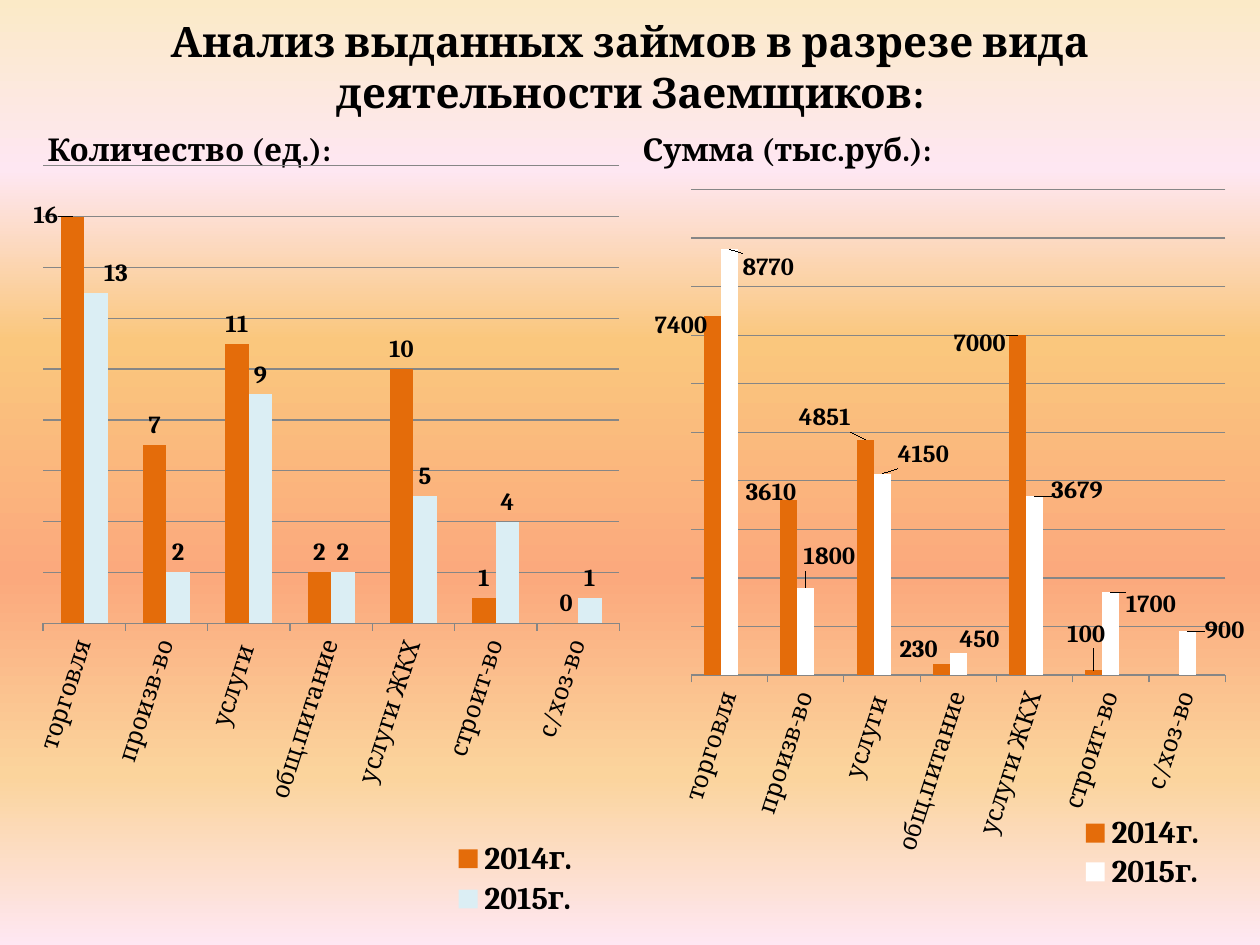
from collections import namedtuple
from lxml.etree import SubElement
from pptx import Presentation
from pptx.chart.data import CategoryChartData
from pptx.dml.color import RGBColor
from pptx.enum.chart import (XL_CHART_TYPE, XL_LABEL_POSITION, XL_LEGEND_POSITION,
                             XL_TICK_LABEL_POSITION, XL_TICK_MARK)
from pptx.enum.text import MSO_ANCHOR, PP_ALIGN
from pptx.oxml import parse_xml
from pptx.oxml.ns import nsdecls, qn
from pptx.util import Inches, Pt

Box = namedtuple("Box", "left top width height")

ACTIVITIES = ["торговля", "произв-во", "услуги ", "общ.питание",
              "услуги ЖКХ", "строит-во", "с/хоз-во"]
BACKGROUND = [(0, "FBEAC7"), (18, "FEE7F2"), (36, "FAC77D"),
              (61, "FBA97D"), (82, "FBD49C"), (100, "FEE7F2")]
ORANGE, PALE_BLUE, WHITE, GREEN = "E46C0A", "DBEEF4", "FFFFFF", "9BBB59"
BLACK, GREY = "000000", "868686"

COUNT_SERIES = [
    ("2014г.", [16, 7, 11, 2, 10, 1, 0], ORANGE, {0: (-0.21, 0.15)}),
    ("2015г.", [13, 2, 9, 2, 5, 4, 1], PALE_BLUE, {0: (0.16, 0)}),
]
AMOUNT_SERIES = [
    ("2014г.", [7400, 3610, 4851, 230, 7000, 100, None], ORANGE,
     {0: (-0.25, 0.23), 1: (-0.14, 0.1), 2: (-0.32, -0.02),
      3: (-0.18, 0.04), 4: (-0.3, 0.22), 5: (-0.06, -0.13)}),
    ("2015г.", [8770, 1800, 4150, 450, 3679, 1700, 900], WHITE,
     {0: (0.31, 0.3), 1: (0.19, -0.09), 2: (0.33, 0), 3: (0.17, 0.05),
      4: (0.34, 0.11), 5: (0.32, 0.25), 6: (0.3, 0.15)}),
    ("Series 3", [0], GREEN, None),
]


def color(value):
    return RGBColor.from_string(value)


def style_font(font, size, bold=False, name="Cambria"):
    font.name, font.size, font.bold = name, Pt(size), bold
    font.color.rgb = color(BLACK)


def paint_background(page):
    page.background.fill.gradient()
    gradient = page.element.find(".//" + qn("a:gradFill"))
    stops = gradient.find(qn("a:gsLst"))
    for stop in list(stops):
        stops.remove(stop)
    for percent, shade in BACKGROUND:
        stop = SubElement(stops, qn("a:gs"), pos=str(percent * 1000))
        SubElement(stop, qn("a:srgbClr"), val=shade)
    gradient.find(qn("a:lin")).set("ang", "5400000")


def add_text(page, box, text, size, align, anchor):
    frame = page.shapes.add_textbox(*map(Inches, box)).text_frame
    frame.word_wrap = True
    frame.vertical_anchor = anchor
    para = frame.paragraphs[0]
    para.alignment = align
    span = para.add_run()
    span.text = text
    style_font(span.font, size, bold=True)


def place(parent, index, x, y, size=None, inner=False):
    for old in parent.findall(qn("c:layout")):
        parent.remove(old)
    layout = parse_xml(f"<c:layout {nsdecls('c')}><c:manualLayout/></c:layout>")
    settings = [("x", x), ("y", y)]
    if size:
        settings = [("xMode", "edge"), ("yMode", "edge"), *settings,
                    ("w", size[0]), ("h", size[1])]
    if inner:
        settings.insert(0, ("layoutTarget", "inner"))
    for tag, value in settings:
        SubElement(layout[0], qn("c:" + tag), val=str(value))
    parent.insert(index, layout)


def style_axes(chart, maximum, step):
    categories, values = chart.category_axis, chart.value_axis
    categories.major_tick_mark = XL_TICK_MARK.OUTSIDE
    categories.tick_label_position = XL_TICK_LABEL_POSITION.NEXT_TO_AXIS
    style_font(categories.tick_labels.font, 14)
    body = categories._element.find(qn("c:txPr")).find(qn("a:bodyPr"))
    body.set("rot", str(-72 * 60000))
    body.set("vert", "horz")
    values.visible = False
    values.minimum_scale, values.maximum_scale = 0, maximum
    values.major_unit = step
    values.has_major_gridlines = True
    for line in (categories.format.line, values.major_gridlines.format.line):
        line.color.rgb = color(GREY)
        line.width = Pt(0.75)


def style_series(series, shade, offsets, box):
    series.format.fill.solid()
    series.format.fill.fore_color.rgb = color(shade)
    series.invert_if_negative = False
    if offsets is None:
        return
    labels = series.data_labels
    labels.show_value = True
    labels.position = XL_LABEL_POSITION.OUTSIDE_END
    style_font(labels.font, 14, bold=True)
    for index, (across, down) in offsets.items():
        label = series.points[index].data_label
        label.position = XL_LABEL_POSITION.OUTSIDE_END
        style_font(label.font, 14, bold=True)
        entry = next(item for item in series._element.iter(qn("c:dLbl"))
                     if item.find(qn("c:idx")).get("val") == str(index))
        place(entry, 1, across / box.width, down / box.height)


def add_legend(chart, corner, hidden):
    chart.has_legend = True
    chart.legend.position = XL_LEGEND_POSITION.RIGHT
    chart.legend.include_in_layout = False
    style_font(chart.legend.font, 18, bold=True)
    legend = chart.element.find(".//" + qn("c:legend"))
    place(legend, 1, *corner, size=(0.25, 0.11))
    for index in hidden:
        legend.insert(1, parse_xml(
            f"<c:legendEntry {nsdecls('c')}><c:idx val='{index}'/>"
            "<c:delete val='1'/></c:legendEntry>"))


def add_columns(page, box, rows, scale, plot_box, legend_corner):
    data = CategoryChartData()
    data.categories = ACTIVITIES
    for name, values, _, _ in rows:
        data.add_series(name, values)
    chart = page.shapes.add_chart(
        XL_CHART_TYPE.COLUMN_CLUSTERED, *map(Inches, box), data).chart
    style_font(chart.font, 18, name="Calibri")
    chart.has_title = False
    plot = chart.plots[0]
    plot.gap_width, plot.overlap, plot.vary_by_categories = 150, 0, False
    style_axes(chart, *scale)
    for series, (_, _, shade, offsets) in zip(plot.series, rows):
        style_series(series, shade, offsets, box)
    area = chart.element.find(".//" + qn("c:plotArea"))
    place(area, 0, plot_box.left, plot_box.top,
          size=(plot_box.width, plot_box.height), inner=True)
    add_legend(chart, legend_corner,
               [index for index, row in enumerate(rows) if row[3] is None])


def build_slide(page):
    paint_background(page)
    add_text(page, Box(0.5, 0.13, 9, 0.79),
             "Анализ выданных займов в разрезе вида деятельности Заемщиков:",
             24, PP_ALIGN.CENTER, MSO_ANCHOR.MIDDLE)
    for box, text in ((Box(0.28, 0.99, 4.72, 0.39), "Количество (ед.):"),
                      (Box(5, 1.07, 4.8, 0.31), "Сумма (тыс.руб.):")):
        add_text(page, box, text, 18, PP_ALIGN.JUSTIFY, MSO_ANCHOR.BOTTOM)
    add_columns(page, Box(0.2, 1.31, 4.72, 6.06), COUNT_SERIES, (18, 2),
                Box(0.03, 0, 0.97, 0.6), (0.7, 0.88))
    add_columns(page, Box(5, 1.39, 4.88, 5.75), AMOUNT_SERIES, (10000, 1000),
                Box(0.1, 0.02, 0.87, 0.67), (0.71, 0.88))


def main():
    deck = Presentation()
    deck.slide_width, deck.slide_height = Inches(10), Inches(7.5)
    build_slide(deck.slides.add_slide(deck.slide_layouts[6]))
    deck.save("out.pptx")


if __name__ == "__main__":
    main()
